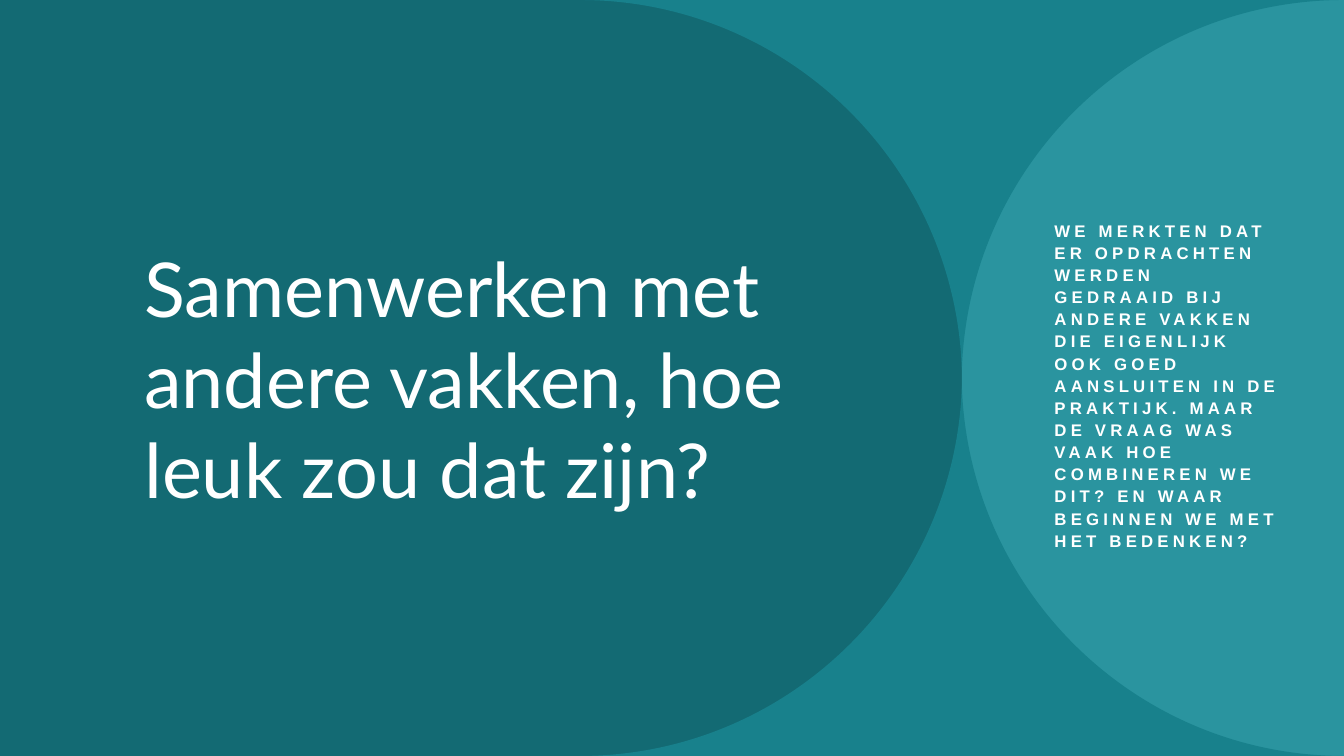
import math

from lxml import etree
from pptx import Presentation
from pptx.dml.color import RGBColor
from pptx.enum.shapes import MSO_SHAPE
from pptx.enum.text import MSO_ANCHOR, MSO_AUTO_SIZE, PP_ALIGN
from pptx.oxml.ns import qn
from pptx.util import Inches, Pt

RECT = MSO_SHAPE.RECTANGLE
MIDDLE = MSO_ANCHOR.MIDDLE
NO_FIT = MSO_AUTO_SIZE.NONE
LEFT = PP_ALIGN.LEFT

WIDE, HIGH = 13.33, 7.5
RADIUS = 3.79
SPLIT = WIDE - RADIUS  # where the two round panels touch
TIP = 3.67             # depth of each wedge

TEAL, DARK, LIGHT, WHITE = "18818C", "126169", "4ED3E1", "FFFFFF"

TITLE = "Samenwerken met andere vakken, hoe leuk zou dat zijn?"
STORY = (
    "WE MERKTEN DAT ER OPDRACHTEN WERDEN GEDRAAID BIJ ANDERE VAKKEN "
    "DIE EIGENLIJK OOK GOED AANSLUITEN IN DE PRAKTIJK. MAAR DE VRAAG "
    "WAS VAAK HOE COMBINEREN WE DIT? EN WAAR BEGINNEN WE MET HET BEDENKEN?"
)


def paint(fill, tone):
    fill.solid()
    fill.fore_color.rgb = RGBColor.from_string(tone)


def finish(shape, tone):
    paint(shape.fill, tone)
    shape.line.fill.background()
    shape.shadow.inherit = False


def add_panel(slide, box, tone, alpha):
    """Translucent rectangle over the given box."""
    panel = slide.shapes.add_shape(RECT, *map(Inches, box))
    finish(panel, tone)
    color = panel.element.xpath("./p:spPr/a:solidFill/a:srgbClr")[0]
    etree.SubElement(color, qn("a:alpha"), val=str(alpha * 1000))


def bend(shape):
    """Turn each three line points of an outline into one Bezier curve."""
    lines = shape.element.xpath(".//a:path/a:lnTo")
    for i in range(0, len(lines), 3):
        curve = etree.Element(qn("a:cubicBezTo"))
        lines[i].addprevious(curve)
        for line in lines[i:i + 3]:
            curve.append(line[0])
            line.getparent().remove(line)


def add_wedge(slide, edge, sign):
    """Curved wedge pointing inward from the slide edge at height edge."""
    turn = math.asin((RADIUS - TIP) / RADIUS)
    pull = 4 / 3 * math.tan((math.pi / 2 - turn) / 4) * RADIUS
    end = RADIUS * math.cos(turn)
    arc = [(0, 0), (pull, 0),
           (end - pull * math.sin(turn), TIP - pull * math.cos(turn)),
           (RADIUS, TIP)]
    left = [(SPLIT - RADIUS + x, edge + sign * y) for x, y in arc]
    right = [(WIDE - x, edge + sign * y) for x, y in reversed(arc[:-1])]
    first, *rest = [(Inches(x), Inches(y)) for x, y in left + right]
    path = slide.shapes.build_freeform(*first)
    path.add_line_segments(rest, close=True)
    wedge = path.convert_to_shape()
    bend(wedge)
    finish(wedge, TEAL)


def set_text(shape, box, text, size, face, bold=False):
    """Place a text shape in its box and style its one paragraph."""
    shape.left, shape.top, shape.width, shape.height = map(Inches, box)
    frame = shape.text_frame
    frame.text = text
    frame.word_wrap = True
    frame.auto_size = NO_FIT
    frame.vertical_anchor = MIDDLE
    para = frame.paragraphs[0]
    para.alignment = LEFT
    font = para.font
    font.size, font.name, font.bold = Pt(size), face, bold
    font.color.rgb = RGBColor.from_string(WHITE)
    return para


def add_back(slide):
    paint(slide.background.fill, TEAL)
    add_panel(slide, (0, 0, WIDE, HIGH), DARK, 70)
    add_panel(slide, (SPLIT, 0, RADIUS, HIGH), LIGHT, 40)
    add_wedge(slide, 0, 1)
    add_wedge(slide, HIGH, -1)


def add_title(slide, box):
    title = slide.shapes.title
    para = set_text(title, box, TITLE, 54, "Lato")
    para.line_spacing = 1.0
    slide.shapes.element.append(title.element)  # bring to front


def add_story(slide, box):
    story = slide.shapes.add_textbox(0, 0, 0, 0)
    para = set_text(story, box, STORY, 12, "Arial", True)
    para.line_spacing = 1.1
    para.space_before = Pt(10)
    story.element.xpath(".//a:defRPr")[0].set("spc", "300")


def main():
    deck = Presentation()
    deck.slide_width, deck.slide_height = Inches(WIDE), Inches(HIGH)
    slide = deck.slides.add_slide(deck.slide_layouts.get_by_name("Title Only"))
    add_back(slide)
    add_title(slide, (1.33, 1.75, 7.33, 4))
    add_story(slide, (10.36, 2.21, 2.48, 3.21))
    deck.save("out.pptx")


if __name__ == "__main__":
    main()
